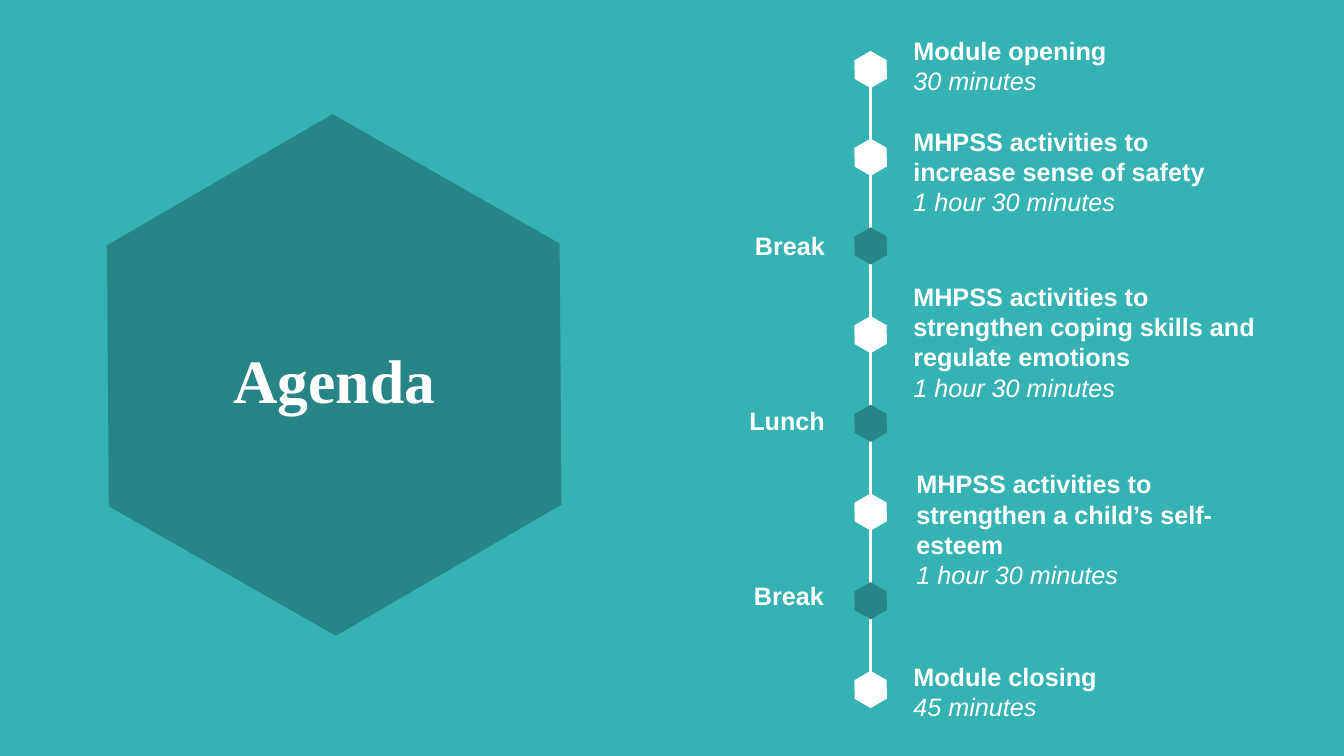
from pptx import Presentation
from pptx.dml.color import RGBColor
from pptx.enum.shapes import MSO_CONNECTOR as Connector, MSO_SHAPE as Shape
from pptx.enum.text import MSO_ANCHOR as Anchor, MSO_AUTO_SIZE as AutoSize, PP_ALIGN as Align
from pptx.util import Emu, Pt
from lxml.etree import SubElement
from pptx.oxml.ns import qn

PX = 9144
COLORS = {"background": "35B2B4", "accent": "278587", "light": "FFFFFF"}
SESSION_LEFT, SESSION_WIDTH = 896, 359
BREAK_LEFT, BREAK_WIDTH, BREAK_HEIGHT = 680, 148, 40
FIRST_MARKER, LAST_MARKER = 53, 668

AGENDA = [
    ("Module opening", "30 minutes", SESSION_LEFT, 30, 71),
    ("MHPSS activities to increase sense of safety", "1 hour 30 minutes", SESSION_LEFT, 120, 101),
    ("Break", None, BREAK_LEFT, 224, BREAK_HEIGHT),
    ("MHPSS activities to strengthen coping skills and regulate emotions", "1 hour 30 minutes",
     SESSION_LEFT, 274, 131),
    ("Lunch", None, BREAK_LEFT, 397, BREAK_HEIGHT),
    ("MHPSS activities to strengthen a child’s self-esteem", "1 hour 30 minutes",
     SESSION_LEFT + 3, 460, 131),
    ("Break", None, BREAK_LEFT - 1, 571, BREAK_HEIGHT),
    ("Module closing", "45 minutes", SESSION_LEFT, 651, 71),
]


def px(*lengths):
    return [Emu(length * PX) for length in lengths]


def color(name):
    return RGBColor.from_string(COLORS[name])


class AgendaPage:
    def __init__(self, deck):
        self.page = deck.slides.add_slide(deck.slide_layouts[5])
        self.shapes = self.page.shapes
        fill = self.page.background.fill
        fill.solid()
        fill.fore_color.rgb = color("background")

    def style(self, para, font, size, bold=True, italic=False):
        for span in para.runs:
            span.font.name = font
            span.font.size = Pt(size)
            span.font.bold = bold
            span.font.italic = italic
            span.font.color.rgb = color("light")

    def title(self, text, left, top, width, height):
        box = self.shapes.title
        box.left, box.top, box.width, box.height = px(left, top, width, height)
        frame = box.text_frame
        frame.text = text
        frame.word_wrap = True
        frame.auto_size = AutoSize.NONE
        frame.vertical_anchor = Anchor.MIDDLE
        para = frame.paragraphs[0]
        para.alignment = Align.CENTER
        para.line_spacing = 0.9
        self.style(para, "Times New Roman", 44)
        box.element.getparent().append(box.element)

    def hexagon(self, left, top, width, height, fill):
        shape = self.shapes.add_shape(Shape.HEXAGON, *px(left, top, width, height))
        shape.adjustments[0] = 0.29
        shape.rotation = 29.7
        shape.shadow.inherit = False
        shape.fill.solid()
        shape.fill.fore_color.rgb = color(fill)
        shape.line.fill.background()

    def line(self, left, top, right, bottom):
        line = self.shapes.add_connector(Connector.STRAIGHT, *px(left, top, right, bottom))
        line.line.color.rgb = color("light")
        line.line.width = Pt(2.25)
        SubElement(line.element.spPr, qn("a:effectLst"))

    def entry(self, name, duration, left, top, height):
        width = SESSION_WIDTH if duration else BREAK_WIDTH
        frame = self.shapes.add_textbox(*px(left, top, width, height)).text_frame
        frame.word_wrap = True
        frame.auto_size = AutoSize.SHAPE_TO_FIT_TEXT
        frame.text = name
        heading = frame.paragraphs[0]
        self.style(heading, "Arial", 18)
        if duration:
            para = frame.add_paragraph()
            para.text = duration
            self.style(para, "Arial", 18, bold=False, italic=True)
        else:
            heading.alignment = Align.RIGHT


def main():
    deck = Presentation()
    deck.slide_width, deck.slide_height = px(1333, 750)
    page = AgendaPage(deck)
    page.hexagon(72, 148, 519, 448, "accent")
    page.line(863, 62, 863, 684)
    for index, (name, duration, left, top, height) in enumerate(AGENDA):
        page.entry(name, duration, left, top, height)
        marker_top = FIRST_MARKER + (LAST_MARKER - FIRST_MARKER) * index // (len(AGENDA) - 1)
        page.hexagon(845, marker_top, 37, 32, "light" if duration else "accent")
    page.title("Agenda", 112, 350, 439, 61)
    deck.save("out.pptx")


if __name__ == "__main__":
    main()
